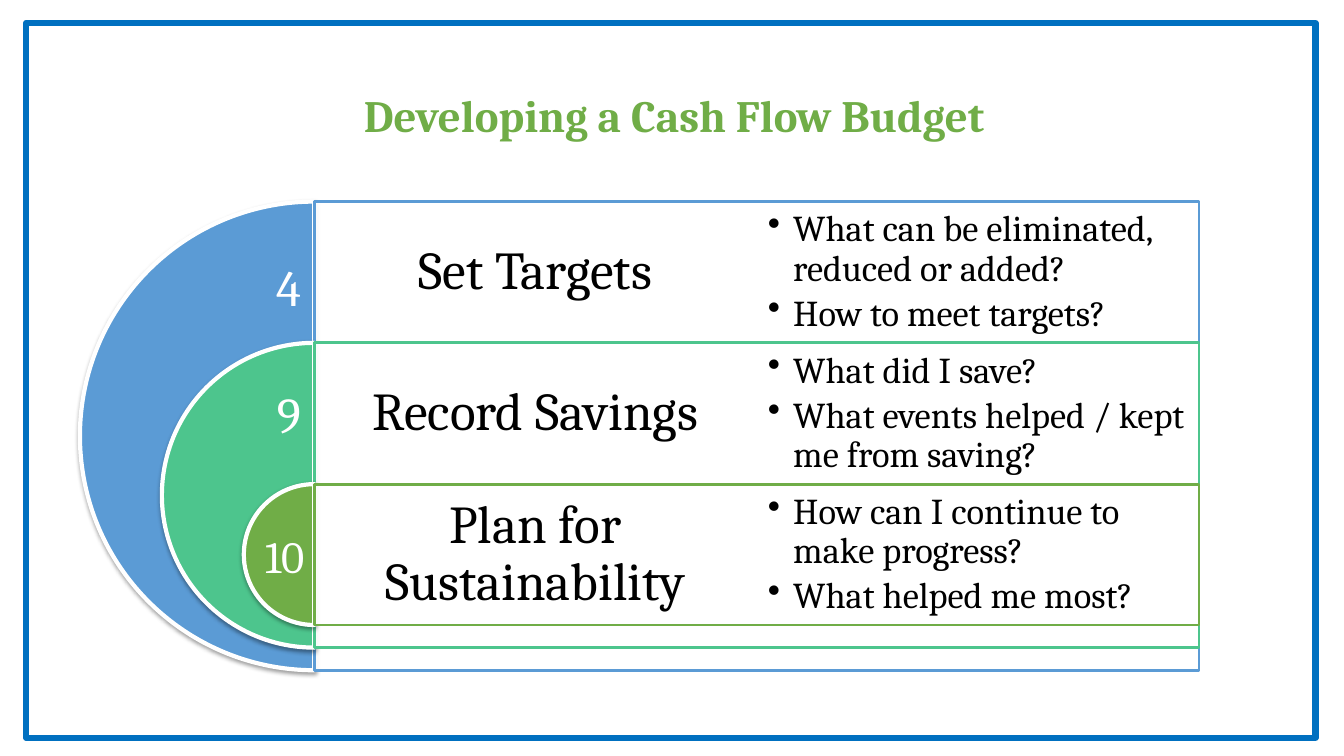
from dataclasses import dataclass

from lxml import etree
from pptx import Presentation
from pptx import util as u
from pptx.dml.color import RGBColor
from pptx.enum import shapes, text
from pptx.oxml import ns


@dataclass(frozen=True)
class Theme:
    font: str = "Cambria"
    white: str = "FFFFFF"
    black: str = "000000"
    frame: str = "0070C0"
    blue: str = "5B9BD5"
    teal: str = "4DC58D"
    green: str = "70AD47"
    title: int = 32
    heading: int = 38
    bullet: int = 26


theme = Theme()
MID, LEFT = text.MSO_ANCHOR.MIDDLE, text.PP_ALIGN.LEFT
CENTER = text.PP_ALIGN.CENTER


def add_box(kind, box, fill=None, line=None, width=0):
    """Add a preset shape; box is left, top, width, height in cm."""
    sp = s.shapes.add_shape(kind, *map(u.Cm, box))
    sp.shadow.inherit = False
    if fill:
        sp.fill.solid()
        sp.fill.fore_color.rgb = RGBColor.from_string(fill)
    else:
        sp.fill.background()
    if line:
        sp.line.color.rgb = RGBColor.from_string(line)
        sp.line.width = u.Pt(width)
    else:
        sp.line.fill.background()
    return sp


def write(sp, lines, size, color, align=LEFT, inset=None, bold=False, **paragraph):
    """Write one paragraph per line with shared formatting."""
    tf = sp.text_frame
    tf.word_wrap = True
    if inset is not None:
        for side in ("left", "right", "top", "bottom"):
            setattr(tf, f"margin_{side}", u.Cm(inset))
    for i, line in enumerate(lines):
        p = tf.paragraphs[0] if i == 0 else tf.add_paragraph()
        for name, value in {"alignment": align, **paragraph}.items():
            setattr(p, name, value)
        r = p.add_run()
        r.text = line
        for name, value in {"name": theme.font, "size": u.Pt(size), "bold": bold}.items():
            setattr(r.font, name, value)
        r.font.color.rgb = RGBColor.from_string(color)
    return tf


prs = Presentation()
prs.slide_width, prs.slide_height = u.Cm(33.87), u.Cm(19.05)
s = prs.slides.add_slide(prs.slide_layouts[6])
RECT, PIE = shapes.MSO_SHAPE.RECTANGLE, shapes.MSO_SHAPE.CHORD
PIE = shapes.MSO_SHAPE.PIE

# Frame
add_box(RECT, (0.66, 0.58, 32.49, 18.01), line=theme.frame, width=4.5)

# Steps: colour, heading, bullets, then number with its left, top, height and size
steps = [
    (theme.blue, "Set Targets",
     ["What can be eliminated, reduced or added?", "How to meet targets?"],
     ("4", 6.71, 6.32, 1.8, 36)),
    (theme.teal, "Record Savings",
     ["What did I save?", "What events helped / kept me from saving?"],
     ("9", 6.73, 9.53, 1.8, 36)),
    (theme.green, "Plan for Sustainability",
     ["How can I continue to make progress?", "What helped me most?"],
     ("10", 6.43, 13.21, 1.63, 32)),
]
axis, first_top, row, column = 7.92, 5.08, 3.56, 11.15
largest, shrink = 11.81, 4.13

for i, (color, heading, bullets, number) in enumerate(steps):
    top, size = first_top + i * row, largest - i * shrink

    # Half disc with a soft shadow
    sp = add_box(PIE, (axis - size / 2, top, size, size), color, theme.white, 3)
    sp.adjustments[0], sp.adjustments[1] = 54, 162  # 90 and 270 degrees
    effects = sp._element.spPr.find(ns.qn("a:effectLst"))
    shadow = etree.SubElement(effects, ns.qn("a:outerShdw"), blurRad=str(u.Pt(3.1)),
                              dist=str(u.Pt(1.6)), dir="5400000", rotWithShape="0")
    shade = etree.SubElement(shadow, ns.qn("a:srgbClr"), val=theme.black)
    etree.SubElement(shade, ns.qn("a:alpha"), val="38000")

    # Panel, slightly transparent
    sp = add_box(RECT, (axis, top, 2 * column, size), theme.white, color, 2)
    panel_color = sp._element.spPr.find(ns.qn("a:solidFill"))[0]
    etree.SubElement(panel_color, ns.qn("a:alpha"), val="90000")

    # Heading
    sp = s.shapes.add_textbox(*map(u.Cm, (axis, top, column, row)))
    tf = write(sp, [heading], theme.heading, theme.black, CENTER, 0.41, line_spacing=0.9)
    tf.vertical_anchor = MID

    # Bullets
    sp = s.shapes.add_textbox(*map(u.Cm, (axis + column, top, column, row)))
    tf = write(sp, bullets, theme.bullet, theme.black, inset=0.28,
               line_spacing=0.9, space_after=u.Pt(4))
    tf.vertical_anchor = MID
    for p in tf.paragraphs:
        pPr = p._p.get_or_add_pPr()
        pPr.set("marL", str(u.Cm(0.64)))
        pPr.set("indent", str(-u.Cm(0.64)))
        etree.SubElement(pPr, ns.qn("a:buChar"), char="•")

    # Number
    label, left, label_top, height, points = number
    sp = s.shapes.add_textbox(*map(u.Cm, (left, label_top, 3.51, height)))
    tf = write(sp, [label], points, theme.white)
    tf.auto_size = text.MSO_AUTO_SIZE.SHAPE_TO_FIT_TEXT

# Title
sp = add_box(RECT, (2.01, 1.14, 29.97, 3.48), theme.white)
tf = write(sp, ["Developing a Cash Flow Budget"], theme.title, theme.green, CENTER, bold=True)
tf.vertical_anchor = MID

prs.save("out.pptx")
